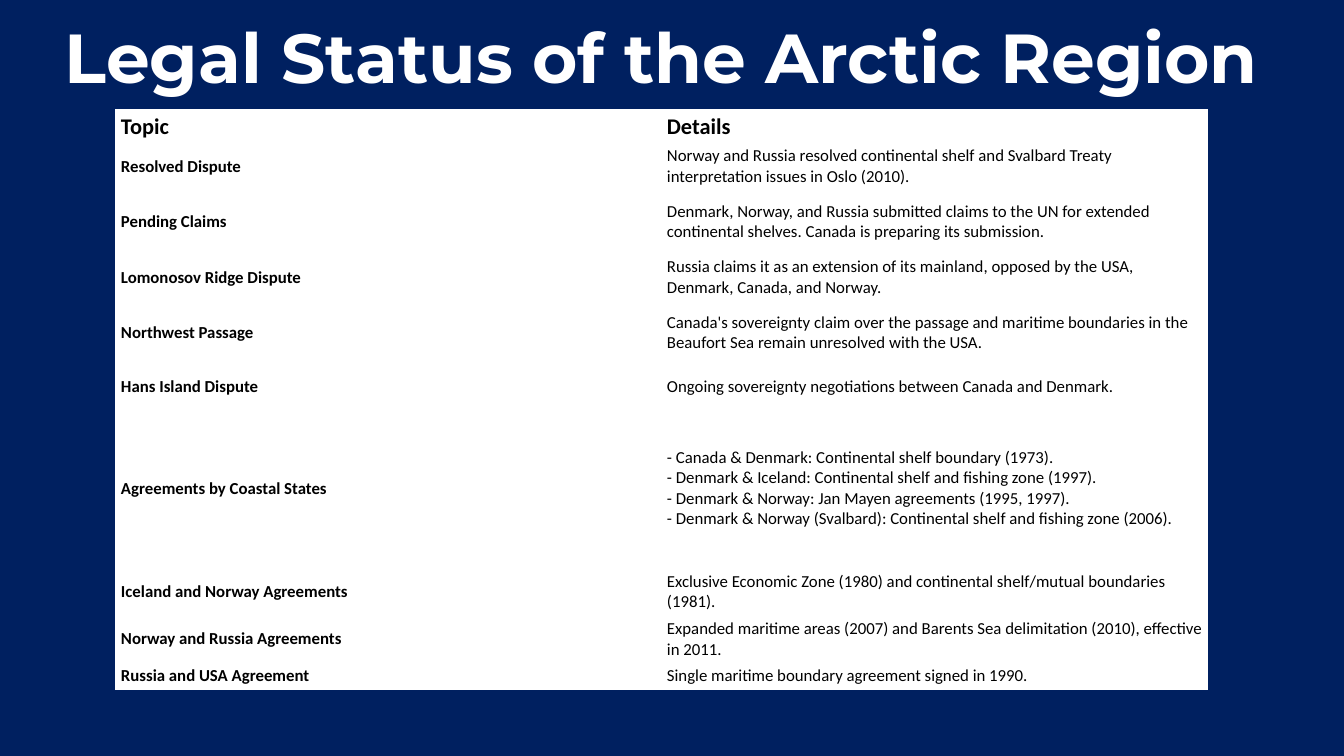
from pptx import Presentation
from pptx.dml.color import RGBColor
from pptx.enum.text import MSO_ANCHOR, MSO_AUTO_SIZE, PP_ALIGN
from pptx.util import Inches, Pt

NAVY, WHITE, BLACK = "002060", "FFFFFF", "000000"

COASTAL_AGREEMENTS = [
    "- Canada & Denmark: Continental shelf boundary (1973).",
    "- Denmark & Iceland: Continental shelf and fishing zone (1997).",
    "- Denmark & Norway: Jan Mayen agreements (1995, 1997).",
    "- Denmark & Norway (Svalbard): Continental shelf and fishing zone (2006).",
]

# Row height in inches, topic, details
TOPICS = [
    (0.26, "Topic", "Details"),
    (0.47, "Resolved Dispute",
     "Norway and Russia resolved continental shelf and Svalbard Treaty "
     "interpretation issues in Oslo (2010)."),
    (0.63, "Pending Claims",
     "Denmark, Norway, and Russia submitted claims to the UN for extended "
     "continental shelves. Canada is preparing its submission."),
    (0.47, "Lomonosov Ridge Dispute",
     "Russia claims it as an extension of its mainland, opposed by the USA, "
     "Denmark, Canada, and Norway."),
    (0.63, "Northwest Passage",
     "Canada's sovereignty claim over the passage and maritime boundaries in "
     "the Beaufort Sea remain unresolved with the USA."),
    (0.44, "Hans Island Dispute",
     "Ongoing sovereignty negotiations between Canada and Denmark."),
    (1.58, "Agreements by Coastal States", "\v".join(COASTAL_AGREEMENTS)),
    (0.47, "Iceland and Norway Agreements",
     "Exclusive Economic Zone (1980) and continental shelf/mutual boundaries "
     "(1981)."),
    (0.47, "Norway and Russia Agreements",
     "Expanded maritime areas (2007) and Barents Sea delimitation (2010), "
     "effective in 2011."),
    (0.26, "Russia and USA Agreement",
     "Single maritime boundary agreement signed in 1990."),
]


def color(hex_string):
    return RGBColor.from_string(hex_string)


def set_all(target, values):
    for name, value in values.items():
        setattr(target, name, value)


def paint(fill, hex_string):
    fill.solid()
    fill.fore_color.rgb = color(hex_string)


def format_font(paragraph, font_name, size, bold, hex_string):
    for run in paragraph.runs:
        set_all(run.font, {"name": font_name, "size": Pt(size), "bold": bold})
        run.font.color.rgb = color(hex_string)


def place_heading(slide, left, top, width, height):
    heading = slide.shapes.title
    set_all(heading, {"left": Inches(left), "top": Inches(top),
                      "width": Inches(width), "height": Inches(height)})
    frame = heading.text_frame
    frame.text = "Legal Status of the Arctic Region"
    set_all(frame, {"margin_left": 0, "margin_top": 0, "margin_right": 0,
                    "margin_bottom": 0, "word_wrap": True,
                    "vertical_anchor": MSO_ANCHOR.TOP,
                    "auto_size": MSO_AUTO_SIZE.SHAPE_TO_FIT_TEXT})
    line = frame.paragraphs[0]
    set_all(line, {"alignment": PP_ALIGN.CENTER, "line_spacing": Pt(69.3),
                   "space_before": Pt(0)})
    format_font(line, "Montserrat", 49.5, True, WHITE)


def place_topics(slide, left, top, width, height):
    holder = slide.shapes.add_table(
        len(TOPICS), 2, Inches(left), Inches(top), Inches(width), Inches(height))
    topics = holder.table
    topics.horz_banding = False
    cell_format = {"margin_left": Inches(0.05), "margin_right": Inches(0.05),
                   "margin_top": Inches(0.03), "margin_bottom": Inches(0.03),
                   "vertical_anchor": MSO_ANCHOR.MIDDLE}

    for row, (row_height, *texts) in enumerate(TOPICS):
        topics.rows[row].height = Inches(row_height)
        is_header = row == 0
        for column, text in enumerate(texts):
            cell = topics.cell(row, column)
            cell.text = text
            set_all(cell, cell_format)
            paint(cell.fill, WHITE)
            format_font(cell.text_frame.paragraphs[0], "Calibri",
                        16 if is_header else 12, is_header or column == 0, BLACK)
    holder.height = Inches(height)


def main():
    deck = Presentation()
    set_all(deck, {"slide_width": Inches(13.33), "slide_height": Inches(7.5)})
    slide = deck.slides.add_slide(deck.slide_layouts.get_by_name("Title Only"))

    # Background
    paint(slide.background.fill, NAVY)
    # Heading across the top
    place_heading(slide, 0.07, 0, 12.98, 0.88)
    # Topics and their details
    place_topics(slide, 1.15, 1.09, 10.83, 5.74)

    deck.save("out.pptx")


if __name__ == "__main__":
    main()
